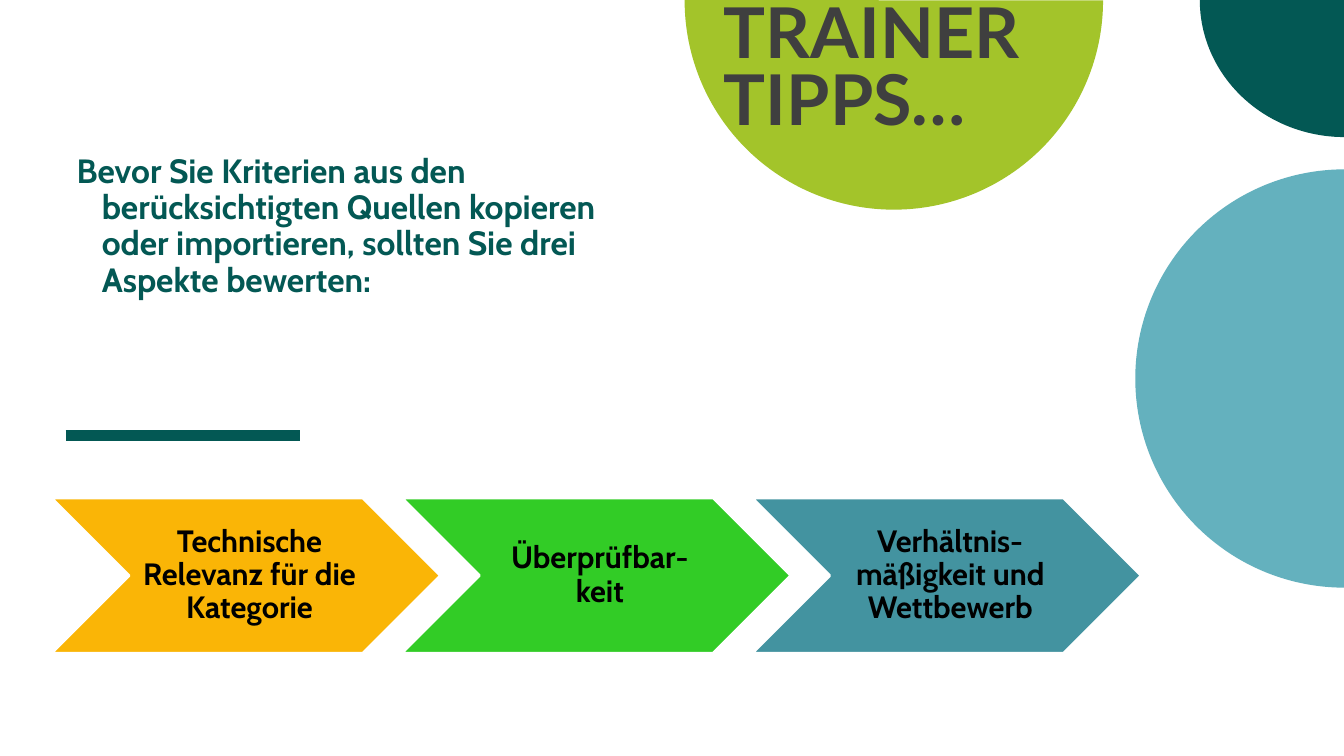
from lxml import etree
from pptx import Presentation, util as u
from pptx.dml.color import RGBColor
from pptx.enum import shapes, text
from pptx.oxml.ns import qn

DARK_TEAL = RGBColor(0x03, 0x58, 0x54)
LIME = RGBColor(0xA3, 0xC4, 0x2A)
SKY = RGBColor(0x64, 0xB1, 0xBE)
CHARCOAL = RGBColor(0x3F, 0x3F, 0x3F)
AMBER = RGBColor(0xFA, 0xB5, 0x06)
GREEN = RGBColor(0x32, 0xCC, 0x26)
STEEL = RGBColor(0x43, 0x93, 0xA0)
BLACK = RGBColor(0, 0, 0)
WHITE = RGBColor(0xFF, 0xFF, 0xFF)


def inches(*values):
    return [u.Inches(value) for value in values]


class TipSlide:
    """Draws the elements of one slide in a shared style."""
    body_font = "Cabin"
    title_font = "Lato"

    def __init__(self, slide):
        self.slide = slide

    def shape(self, preset, box, fill):
        shape = self.slide.shapes.add_shape(preset, *inches(*box))
        shape.shadow.inherit = False
        shape.fill.solid()
        shape.fill.fore_color.rgb = fill
        shape.line.fill.background()
        return shape

    def pie(self, box, fill, start, end, rotation=0):
        pie = self.shape(shapes.MSO_SHAPE.PIE, box, fill)
        # Angles are stored in 60000ths of a degree, adjustments in 100000ths
        pie.adjustments[0] = start * 0.6
        pie.adjustments[1] = end * 0.6
        pie.rotation = rotation

    def chevron(self, box, fill):
        chevron = self.shape(shapes.MSO_SHAPE.CHEVRON, box, fill)
        chevron.adjustments[0] = 0.5
        chevron.line.color.rgb = WHITE
        chevron.line.width = u.Pt(2)

    def rule(self, start, end, color, width):
        rule = self.slide.shapes.add_connector(
            shapes.MSO_CONNECTOR.STRAIGHT, *inches(*start, *end))
        rule.line.color.rgb = color
        rule.line.width = u.Pt(width)
        etree.SubElement(rule._element.spPr, qn("a:effectLst"))

    def text(self, box, wording, size, color, font=body_font, spacing=0.9,
             anchor=text.MSO_ANCHOR.TOP, align=text.PP_ALIGN.LEFT,
             insets=(0, 0, 0, 0), left=0, hanging=0):
        frame = self.slide.shapes.add_textbox(*inches(*box)).text_frame
        frame.word_wrap = True
        frame.vertical_anchor = anchor
        (frame.margin_left, frame.margin_top,
         frame.margin_right, frame.margin_bottom) = inches(*insets)
        paragraph = frame.paragraphs[0]
        paragraph.alignment = align
        paragraph.line_spacing = spacing
        if left:
            properties = paragraph._p.get_or_add_pPr()
            properties.set("marL", str(u.Inches(left)))
            properties.set("indent", str(-u.Inches(hanging)))
        run = paragraph.add_run()
        run.text = wording
        run.font.name = font
        run.font.size = u.Pt(size)
        run.font.bold = True
        run.font.color.rgb = color


def main():
    deck = Presentation()
    deck.slide_width, deck.slide_height = inches(13.33, 7.5)
    tips = TipSlide(deck.slides.add_slide(deck.slide_layouts[6]))

    # Rule and circle segments
    tips.rule((0.65, 4.32), (2.98, 4.32), DARK_TEAL, 8)
    tips.pie((11.9, -1.36, 2.87, 2.72), DARK_TEAL, 90.23, 180.44)
    tips.pie((6.79, -2.07, 4.15, 4.15), LIME, 0, 180.86)
    tips.pie((11.26, 1.68, 4.15, 4.15), SKY, 0, 180.63, rotation=90)

    # Title and introduction
    tips.text((7.18, -0.94, 3.59, 2.32), "TRAINER TIPPS…", 50, CHARCOAL,
              font=tips.title_font, spacing=0.8,
              anchor=text.MSO_ANCHOR.BOTTOM)
    tips.text((0.51, 1.53, 6, 1.8),
              "Bevor Sie Kriterien aus den berücksichtigten Quellen kopieren "
              "oder importieren, sollten Sie drei Aspekte bewerten:",
              24, DARK_TEAL, left=0.5, hanging=0.25)

    # Three aspects; each label fills the chevron between notch and point
    aspects = [
        ("Technische Relevanz für die Kategorie", AMBER),
        ("Überprüfbar-keit", GREEN),
        ("Verhältnis-mäßigkeit und Wettbewerb", STEEL),
    ]
    first_left, top, width, height, step = 0.51, 4.94, 3.86, 1.54, 3.475
    notch = height / 2
    for index, (aspect, fill) in enumerate(aspects):
        left = first_left + index * step
        tips.chevron((left, top, width, height), fill)
        tips.text((left + notch, top, width - 2 * notch, height), aspect, 22,
                  BLACK, anchor=text.MSO_ANCHOR.MIDDLE,
                  align=text.PP_ALIGN.CENTER, insets=(0.1, 0.03, 0.03, 0.03))

    deck.save("out.pptx")


if __name__ == "__main__":
    main()
